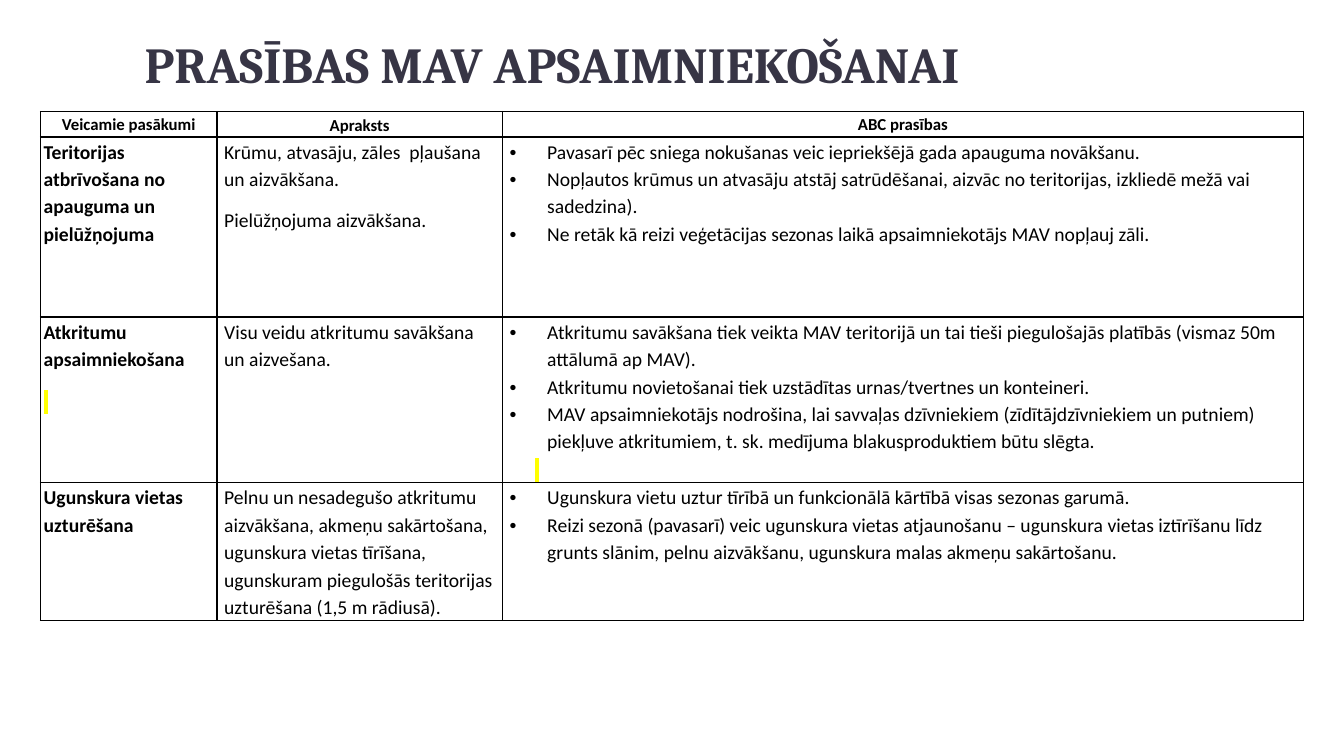
from pptx import Presentation
from pptx.dml.color import RGBColor
from pptx.enum.text import MSO_ANCHOR, PP_ALIGN
from pptx.oxml import parse_xml
from pptx.oxml.ns import nsdecls, qn
from pptx.util import Cm, Pt

LEFT, CENTER = PP_ALIGN.LEFT, PP_ALIGN.CENTER
TOP, MIDDLE, BOTTOM = MSO_ANCHOR.TOP, MSO_ANCHOR.MIDDLE, MSO_ANCHOR.BOTTOM

BLACK, SLATE, YELLOW = "000000", "373545", "FFFF00"
MARK = " "  # a lone no-break space is shown as a highlighted bar
WIDTHS = (4.45, 7.19, 20.19)
HEIGHTS = (0.64, 4.54, 4.17, 3.47)
HEADS = ("Veicamie pasākumi", "Apraksts", "ABC prasības")
TASKS = (
    (
        ["Teritorijas atbrīvošana no apauguma un pielūžņojuma"],
        ["Krūmu, atvasāju, zāles  pļaušana un aizvākšana.",
         "Pielūžņojuma aizvākšana."],
        ["Pavasarī pēc sniega nokušanas veic iepriekšējā gada apauguma novākšanu.",
         "Nopļautos krūmus un atvasāju atstāj satrūdēšanai, aizvāc no teritorijas, "
         "izkliedē mežā vai sadedzina).",
         "Ne retāk kā reizi veģetācijas sezonas laikā apsaimniekotājs MAV nopļauj zāli."],
    ),
    (
        ["Atkritumu apsaimniekošana", MARK],
        ["Visu veidu atkritumu savākšana un aizvešana."],
        ["Atkritumu savākšana tiek veikta MAV teritorijā un tai tieši piegulošajās "
         "platībās (vismaz 50m attālumā ap MAV).",
         "Atkritumu novietošanai tiek uzstādītas urnas/tvertnes un konteineri.",
         "MAV apsaimniekotājs nodrošina, lai savvaļas dzīvniekiem (zīdītājdzīvniekiem "
         "un putniem) piekļuve atkritumiem, t. sk. medījuma blakusproduktiem būtu slēgta.",
         MARK],
    ),
    (
        ["Ugunskura vietas uzturēšana"],
        ["Pelnu un nesadegušo atkritumu aizvākšana, akmeņu sakārtošana, ugunskura "
         "vietas tīrīšana, ugunskuram piegulošās teritorijas uzturēšana (1,5 m rādiusā)."],
        ["Ugunskura vietu uztur tīrībā un funkcionālā kārtībā visas sezonas garumā.",
         "Reizi sezonā (pavasarī) veic ugunskura vietas atjaunošanu – ugunskura vietas "
         "iztīrīšanu līdz grunts slānim, pelnu aizvākšanu, ugunskura malas akmeņu "
         "sakārtošanu."],
    ),
)


def paint(color, hue):
    color.rgb = RGBColor.from_string(hue)


def style(para, face, size, hue, bold):
    for run in para.runs:
        font = run.font
        font.name, font.size, font.bold = face, Pt(size), bold
        paint(font.color, hue)


def mark(run):
    """Highlight a run in yellow."""
    glow = parse_xml(f'<a:highlight {nsdecls("a")}><a:srgbClr val="{YELLOW}"/></a:highlight>')
    run._r.rPr.find(qn("a:latin")).addprevious(glow)


def indent(para, left, first=0, sign=None):
    props = para._p.get_or_add_pPr()
    props.set("marL", str(Cm(left)))
    props.set("indent", str(Cm(first)))
    if sign:
        props.append(parse_xml(f'<a:buFont {nsdecls("a")} typeface="Arial"/>'))
        props.append(parse_xml(f'<a:buChar {nsdecls("a")} char="{sign}"/>'))


def frame(cell):
    """Draw thin black borders and leave the cell unfilled."""
    props = cell._tc.get_or_add_tcPr()
    for side in "LRTB":
        props.append(parse_xml(
            f'<a:ln{side} {nsdecls("a")} w="{Pt(1)}"><a:solidFill>'
            f'<a:srgbClr val="{BLACK}"/></a:solidFill></a:ln{side}>'))
    cell.fill.background()


def write(cell, texts, size=14, bold=False, align=LEFT, pad=0.18, list_like=False):
    frame(cell)
    cell.margin_left = cell.margin_right = Cm(pad)
    cell.margin_top = cell.margin_bottom = 0
    cell.text_frame.text = "\n".join(texts)
    for para in cell.text_frame.paragraphs:
        para.alignment = align
        para.line_spacing = 1.15
        para.space_after = Pt(0 if list_like else 10)
        style(para, "Calibri", size, BLACK, bold)
        blank = para.text == MARK
        if blank:
            mark(para.runs[0])
        if list_like:
            indent(para, *((0.64,) if blank else (0.95, -0.95, "•")))


def add_title(slide):
    title = slide.shapes.title
    title.left, title.top, title.width, title.height = Cm(3.39), Cm(0.76), Cm(28.78), Cm(1.85)
    box = title.text_frame
    box.text = "PRASĪBAS MAV APSAIMNIEKOŠANAI"
    box.vertical_anchor = BOTTOM
    box.margin_bottom = Cm(0.25)
    para = box.paragraphs[0]
    para.alignment = LEFT
    style(para, "Cambria", 36, SLATE, True)


def add_grid(slide):
    table = slide.shapes.add_table(
        len(HEIGHTS), len(WIDTHS), Cm(1.02), Cm(2.81),
        Cm(sum(WIDTHS)), Cm(sum(HEIGHTS))).table
    table.first_row = table.horz_banding = False
    for col, width in zip(table.columns, WIDTHS):
        col.width = Cm(width)
    for row, height in zip(table.rows, HEIGHTS):
        row.height = Cm(height)
    for col, head in enumerate(HEADS):
        write(table.cell(0, col), [head], 12, True, CENTER, 0.08)
    table.cell(0, 1).vertical_anchor = MIDDLE
    for row, (name, about, rules) in enumerate(TASKS, 1):
        write(table.cell(row, 0), name, bold=True, pad=0.08)
        write(table.cell(row, 1), about)
        write(table.cell(row, 2), rules, list_like=True)


def main():
    deck = Presentation()
    deck.slide_width, deck.slide_height = Cm(33.87), Cm(19.05)
    slide = deck.slides.add_slide(deck.slide_layouts[5])
    add_title(slide)
    add_grid(slide)
    deck.save("out.pptx")


if __name__ == "__main__":
    main()
